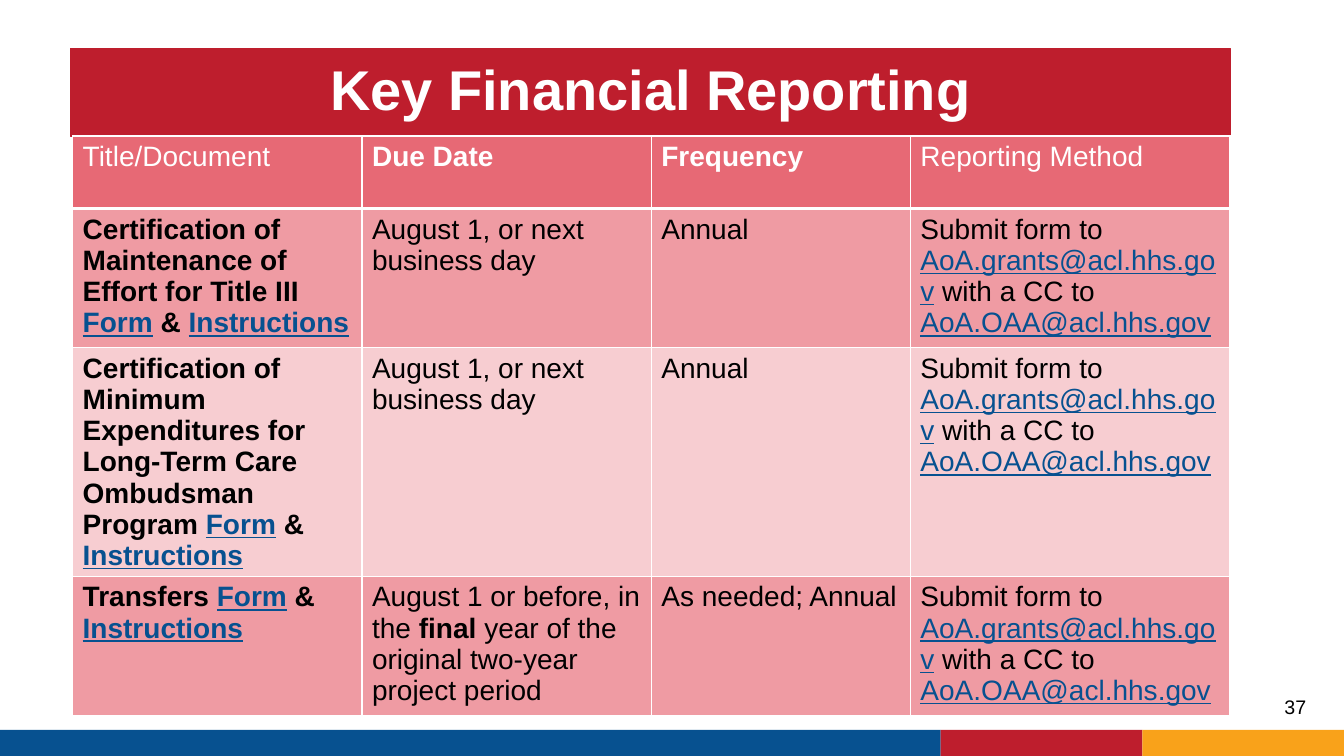
from lxml import etree
from pptx import Presentation
from pptx.dml.color import RGBColor
from pptx.enum import shapes, text
from pptx.oxml import ns
from pptx.util import Inches, Pt

COLORS = {
    "white": "FFFFFF", "black": "000000", "blue": "075190", "gold": "F9A21A",
    "red": "BE1E2D", "header": "E76975", "band": "EF9BA3", "light": "F7CDD1",
}


def rgb(name):
    return RGBColor.from_string(COLORS[name])


def add_border(cell, side, width):
    """Draw a white line on one side (L, R, T or B) of a table cell."""
    ln = etree.SubElement(cell._tc.get_or_add_tcPr(), ns.qn(f"a:ln{side}"), w=str(Pt(width)))
    fill = etree.SubElement(ln, ns.qn("a:solidFill"))
    etree.SubElement(fill, ns.qn("a:srgbClr"), val=COLORS["white"])


prs = Presentation()
prs.slide_width, prs.slide_height = Inches(13.33), Inches(7.5)
s = prs.slides.add_slide(prs.slide_layouts[5])

# Footer bands
for left, width, color in [(0, 9.33, "blue"), (9.33, 2, "red"), (11.33, 2, "gold")]:
    sp = s.shapes.add_shape(shapes.MSO_SHAPE.RECTANGLE, Inches(left), Inches(7.24),
                            Inches(width), Inches(0.27))
    sp.shadow.inherit = False
    sp.fill.solid()
    sp.fill.fore_color.rgb = rgb(color)
    sp.line.fill.background()

# Title
title = s.shapes.title
title.left, title.top, title.width, title.height = map(Inches, (0.7, 0.48, 11.5, 0.87))
title.fill.solid()
title.fill.fore_color.rgb = rgb("red")
title.line.color.rgb = rgb("red")
title.line.width = Pt(0.75)
tf = title.text_frame
tf.text = "Key Financial Reporting"
tf.vertical_anchor = text.MSO_ANCHOR.MIDDLE
p = tf.paragraphs[0]
p.alignment = text.PP_ALIGN.CENTER
p.line_spacing = 0.9
p.font.name, p.font.size, p.font.bold = "Arial", Pt(40), True
p.font.color.rgb = rgb("white")

# Reporting table: each cell is a list of (text, style) runs
FORMS = [("Form", "bold link"), (" & ", "bold"), ("Instructions", "bold link")]
SUBMIT = [("Submit form to ", ""), ("AoA.grants@acl.hhs.gov", "link"),
          (" with a CC to ", ""), ("AoA.OAA@acl.hhs.gov", "link")]
AUGUST = [("August 1, or next business day", "")]
ANNUAL = [("Annual", "")]
rows = [
    (0.72, "header", [[("Title/Document", "")], [("Due Date", "bold")],
                      [("Frequency", "bold")], [("Reporting Method", "")]]),
    (1.38, "band", [[("Certification of Maintenance of Effort for Title III ", "bold")] + FORMS,
                    AUGUST, ANNUAL, SUBMIT]),
    (2.27, "light", [[("Certification of Minimum Expenditures for Long-Term Care "
                       "Ombudsman Program ", "bold")] + FORMS,
                     AUGUST, ANNUAL, SUBMIT]),
    (1.38, "band", [[("Transfers ", "bold")] + FORMS,
                    [("August 1 or before, in the ", ""), ("final", "bold"),
                     (" year of the original two-year project period", "")],
                    [("As needed; Annual", "")], SUBMIT]),
]
col_widths = [2.87, 2.87, 2.57, 3.17]
table = s.shapes.add_table(len(rows), len(col_widths), Inches(0.72), Inches(1.35),
                           Inches(sum(col_widths)), Inches(sum(row[0] for row in rows))).table
for column, width in zip(table.columns, col_widths):
    column.width = Inches(width)

for i, (height, fill, contents) in enumerate(rows):
    table.rows[i].height = Inches(height)
    for j, runs in enumerate(contents):
        cell = table.cell(i, j)
        for side in "LRTB":
            under_header = (i, side) in [(0, "B"), (1, "T")]
            add_border(cell, side, 3 if under_header else 1)
        cell.fill.solid()
        cell.fill.fore_color.rgb = rgb(fill)
        p = cell.text_frame.paragraphs[0]
        p.font.name, p.font.size = "Arial", Pt(20)
        for words, style in runs:
            r = p.add_run()
            r.text = words
            r.font.name, r.font.size = "Arial", Pt(20)
            r.font.bold = "bold" in style
            r.font.underline = "link" in style
            base = "white" if fill == "header" else "black"
            r.font.color.rgb = rgb("blue" if "link" in style else base)

# Page number
tf = s.shapes.add_textbox(Inches(12.64), Inches(6.84), Inches(0.42), Inches(0.34)).text_frame
tf.word_wrap = False
tf.auto_size = text.MSO_AUTO_SIZE.SHAPE_TO_FIT_TEXT
tf.text = "37"
p = tf.paragraphs[0]
p.font.name, p.font.size = "Arial", Pt(14)
p.font.color.rgb = rgb("black")

prs.save("out.pptx")
